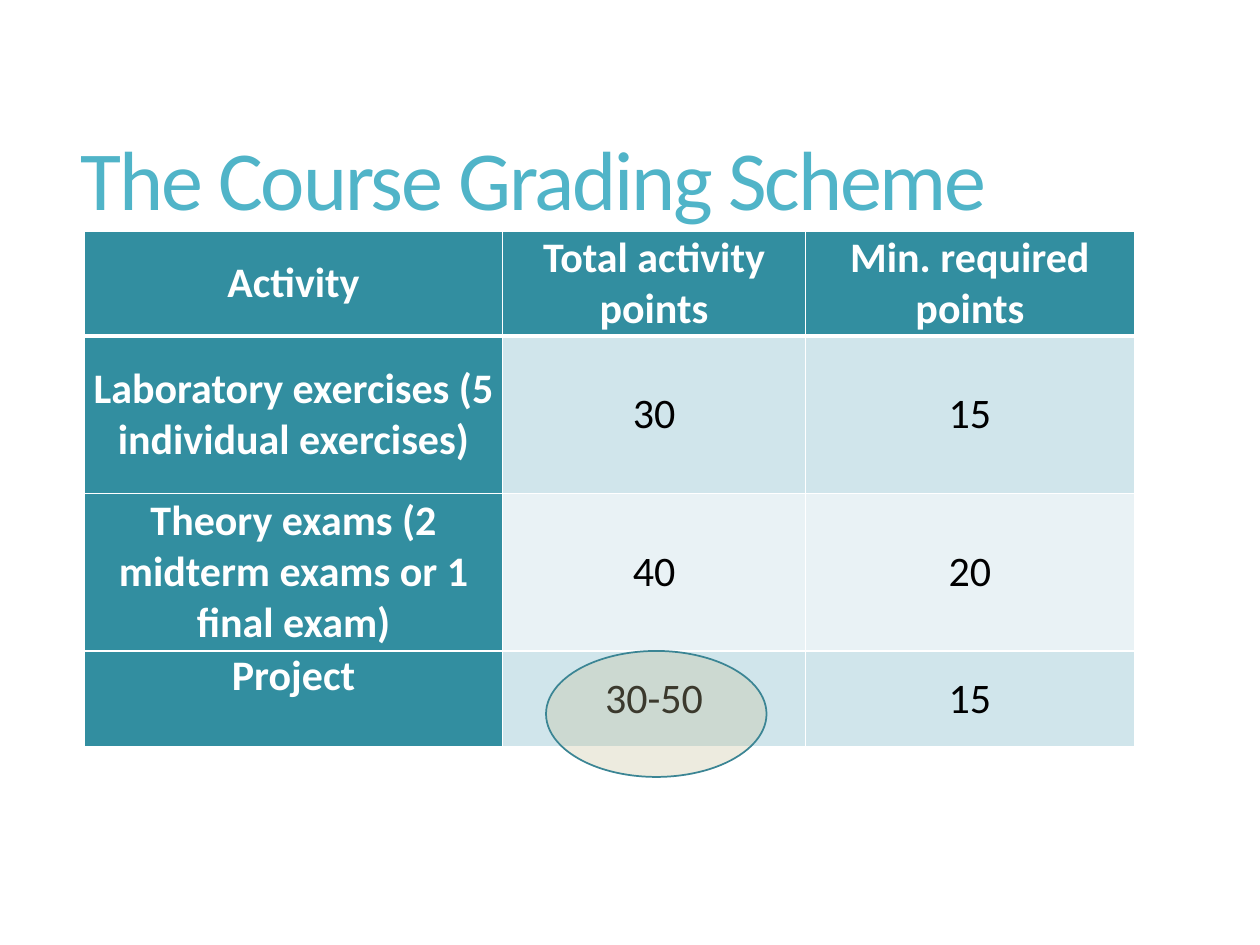
from lxml.etree import SubElement
from pptx import Presentation
from pptx.dml.color import RGBColor
from pptx.enum.shapes import MSO_SHAPE as Shape
from pptx.enum.text import MSO_ANCHOR as Anchor, MSO_AUTO_SIZE as AutoSize, PP_ALIGN as Align
from pptx.oxml.ns import qn
from pptx.util import Pt

FONT = "Calibri"
TITLE_BLUE = RGBColor(0x50, 0xB4, 0xC8)
TEAL = RGBColor(0x32, 0x8E, 0xA0)
DARK_BAND = RGBColor(0xD0, 0xE5, 0xEB)
LIGHT_BAND = RGBColor(0xE9, 0xF2, 0xF5)
MARKER_FILL = RGBColor(0xC5, 0xBF, 0x97)
MARKER_LINE = RGBColor(0x3B, 0x85, 0x94)
WHITE = RGBColor(0xFF, 0xFF, 0xFF)
BLACK = RGBColor(0x00, 0x00, 0x00)

COLUMN_WIDTHS = [239, 173, 188]
ROW_HEIGHTS = [60, 90, 90, 55]
GRADING = [
    ["Activity", "Total activity points", "Min. required points"],
    ["Laboratory exercises (5 individual exercises)", "30", "15"],
    ["Theory exams (2 midterm exams or 1 final exam)", "40", "20"],
    ["Project", "30-50", "15"],
]


def write_text(frame, text, size=24, color=BLACK, bold=False, align=Align.CENTER,
               line_spacing=None, tracking=None):
    paragraph = frame.paragraphs[0]
    paragraph.alignment = align
    paragraph.line_spacing = line_spacing
    run = paragraph.add_run()
    run.text = text
    run.font.name = FONT
    run.font.size = Pt(size)
    run.font.bold = bold
    run.font.color.rgb = color
    if tracking is not None:
        run.font._element.set("spc", str(int(tracking * 100)))


def set_borders(cell, top=1, bottom=1):
    properties = cell._tc.get_or_add_tcPr()
    for side, width in (("L", 1), ("R", 1), ("T", top), ("B", bottom)):
        line = SubElement(properties, qn(f"a:ln{side}"), w=str(Pt(width)))
        fill = SubElement(line, qn("a:solidFill"))
        SubElement(fill, qn("a:srgbClr"), val=str(WHITE))


def add_title(slide, text):
    title = slide.shapes.title
    title.left, title.top, title.width, title.height = Pt(39), Pt(39.6), Pt(636.5), Pt(130.3)
    frame = title.text_frame
    frame.auto_size = AutoSize.NONE
    frame.vertical_anchor = Anchor.MIDDLE
    write_text(frame, text, size=48, color=TITLE_BLUE, align=Align.LEFT,
               line_spacing=0.9, tracking=-1.2)


def format_cell(cell, text, row, column):
    is_heading = row == 0 or column == 0
    cell.margin_left = cell.margin_right = Pt(5)
    cell.margin_top = cell.margin_bottom = 0
    cell.vertical_anchor = Anchor.MIDDLE
    # The rule below the header row is thicker
    set_borders(cell, top=3 if row == 1 else 1, bottom=3 if row == 0 else 1)
    cell.fill.solid()
    cell.fill.fore_color.rgb = TEAL if is_heading else DARK_BAND if row % 2 else LIGHT_BAND
    write_text(cell.text_frame, text, bold=is_heading, color=WHITE if is_heading else BLACK)


def add_grading_table(slide):
    frame = slide.shapes.add_table(len(ROW_HEIGHTS), len(COLUMN_WIDTHS), Pt(48.25), Pt(132),
                                   Pt(sum(COLUMN_WIDTHS)), Pt(sum(ROW_HEIGHTS)))
    table = frame.table
    for column, width in zip(table.columns, COLUMN_WIDTHS):
        column.width = Pt(width)
    for row, height in zip(table.rows, ROW_HEIGHTS):
        row.height = Pt(height)
    for row, texts in enumerate(GRADING):
        for column, text in enumerate(texts):
            format_cell(table.cell(row, column), text, row, column)
    # The project label sits at the top of its cell
    table.cell(len(GRADING) - 1, 0).vertical_anchor = Anchor.TOP


def add_marker(slide, left, top, width, height):
    marker = slide.shapes.add_shape(Shape.OVAL, Pt(left), Pt(top), Pt(width), Pt(height))
    marker.shadow.inherit = False
    marker.fill.solid()
    marker.fill.fore_color.rgb = MARKER_FILL
    color = marker._element.spPr.find(qn("a:solidFill")).find(qn("a:srgbClr"))
    SubElement(color, qn("a:alpha"), val="30000")
    marker.line.color.rgb = MARKER_LINE
    marker.line.width = Pt(1)


def main():
    presentation = Presentation()
    presentation.slide_width, presentation.slide_height = Pt(720), Pt(540)
    slide = presentation.slides.add_slide(presentation.slide_layouts[5])

    add_title(slide, "The Course Grading Scheme")
    add_grading_table(slide)
    # Highlight around the project points
    add_marker(slide, 312, 372, 126, 72)

    presentation.save("out.pptx")


if __name__ == "__main__":
    main()
